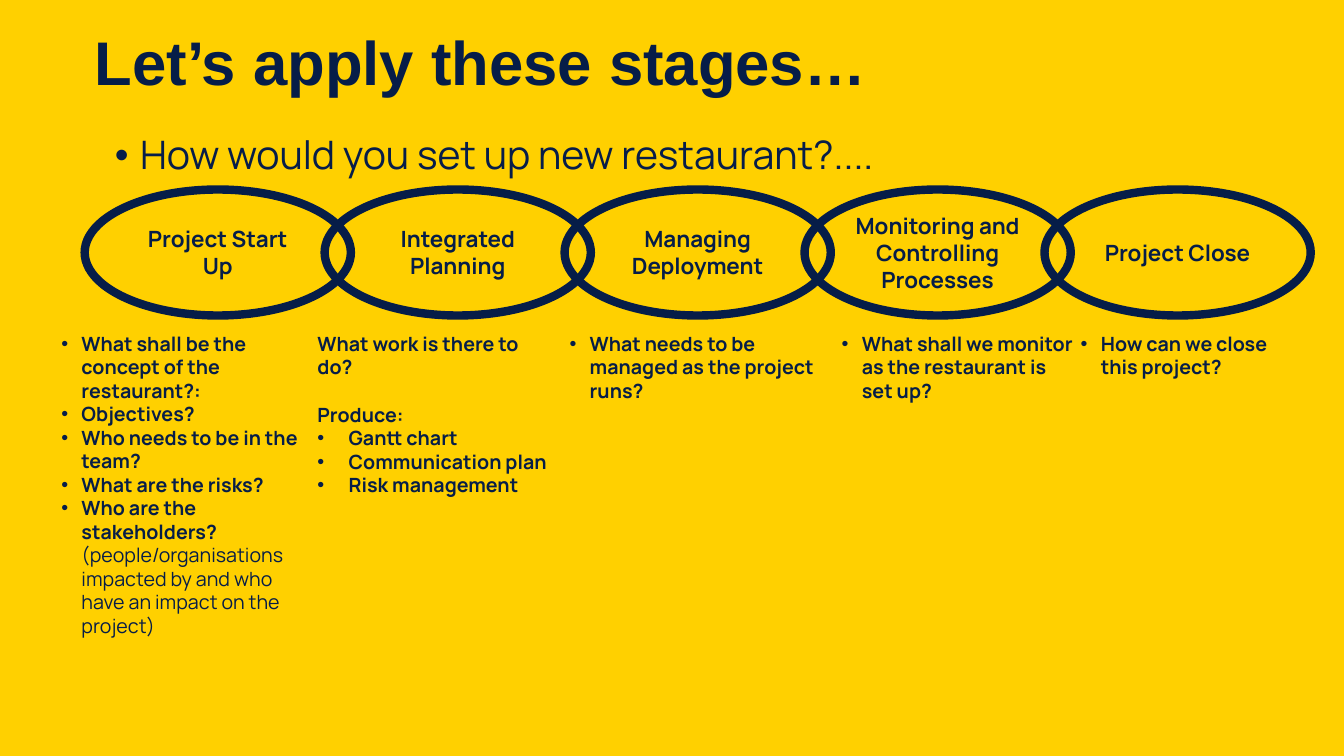
"""Build the slide that applies the project stages to a new restaurant."""
import dataclasses

import pptx
import pptx.dml.color
import pptx.enum.shapes
import pptx.enum.text
import pptx.oxml
import pptx.oxml.ns
import pptx.util
from pptx.util import Inches


@dataclasses.dataclass(frozen=True)
class Theme:
    """Colours, fonts and type sizes of the slide."""

    background: str = "FFD000"
    navy: str = "061D48"
    body_navy: str = "071D49"
    heading_font: str = "Arial"
    text_font: str = "Manrope"
    title_size: int = 44
    prompt_size: int = 28
    stage_size: int = 16
    question_size: int = 14
    gap: int = 17
    ring_width: int = 6


@dataclasses.dataclass(frozen=True)
class Line:
    """One paragraph of a question column."""

    text: str
    indent: float = 0.2
    aside: str = ""
    gap: bool = False


STAGES = [
    "Project Start Up",
    "Integrated Planning",
    "Managing Deployment",
    "Monitoring and Controlling Processes",
    "Project Close",
]
RING_LEFT, RING_STEP = 0.84, 2.38

QUESTIONS = [
    (0.51, 2.66, 3.16, [
        Line("What shall be the concept of the restaurant?:"),
        Line("Objectives?"),
        Line("Who needs to be in the team?"),
        Line("What are the risks?"),
        Line("Who are the stakeholders? ",
             aside="(people/organisations impacted by and who have an impact on the project)"),
    ]),
    (3.05, 2.54, 1.75, [
        Line("What work is there to do?", indent=0),
        Line("Produce:", indent=0, gap=True),
        Line("Gantt chart", indent=0.31),
        Line("Communication plan", indent=0.31),
        Line("Risk management", indent=0.31),
    ]),
    (5.55, 2.92, 0.81, [Line("What needs to be managed as the project runs?")]),
    (8.25, 2.54, 0.81, [Line("What shall we monitor as the restaurant is set up?")]),
    (10.62, 2.38, 0.57, [Line("How can we close this project?")]),
]


class SlideBuilder:
    """Draws themed elements on one slide."""

    def __init__(self, slide, theme):
        """Keep the slide and theme and paint the background."""
        self.slide = slide
        self.theme = theme
        fill = slide.background.fill
        fill.solid()
        fill.fore_color.rgb = self.colour(theme.background)

    def colour(self, value):
        """Return an RGB colour from its hexadecimal value."""
        return pptx.dml.color.RGBColor.from_string(value)

    def format_run(self, run, size, bold=True, font=None, colour=None):
        """Apply the type style to a run."""
        run.font.size = pptx.util.Pt(size)
        run.font.bold = bold
        run.font.name = font or self.theme.text_font
        run.font.color.rgb = self.colour(colour or self.theme.navy)

    def bullet(self, paragraph, indent):
        """Give a paragraph a round bullet with a hanging indent."""
        properties = paragraph._p.get_or_add_pPr()
        properties.set("marL", str(Inches(indent)))
        properties.set("indent", str(-Inches(indent)))
        namespace = pptx.oxml.ns.nsdecls("a")
        for markup in (f'<a:buFont {namespace} typeface="Arial"/>',
                       f'<a:buChar {namespace} char="•"/>'):
            properties.append(pptx.oxml.parse_xml(markup))

    def place(self, placeholder, left, top, width, height, text, anchor):
        """Move a placeholder, fill it and return its paragraph."""
        placeholder.left, placeholder.top = Inches(left), Inches(top)
        placeholder.width, placeholder.height = Inches(width), Inches(height)
        frame = placeholder.text_frame
        frame.text = text
        frame.word_wrap = True
        frame.auto_size = pptx.enum.text.MSO_AUTO_SIZE.NONE
        frame.vertical_anchor = anchor
        paragraph = frame.paragraphs[0]
        paragraph.alignment = pptx.enum.text.PP_ALIGN.LEFT
        paragraph.line_spacing = 0.9
        paragraph.space_before = pptx.util.Pt(0)
        return paragraph

    def title(self, text):
        """Write the slide title."""
        heading = self.place(self.slide.shapes.title, 0.84, -0.07, 8, 1.45, text,
                             pptx.enum.text.MSO_ANCHOR.MIDDLE)
        self.format_run(heading.runs[0], self.theme.title_size, font=self.theme.heading_font)

    def prompt(self, text):
        """Write the leading question in the body placeholder."""
        question = self.place(self.slide.placeholders[1], 1.04, 1.3, 11.5, 0.77, text,
                              pptx.enum.text.MSO_ANCHOR.TOP)
        self.bullet(question, 0.25)
        self.format_run(question.runs[0], self.theme.prompt_size, bold=False,
                        colour=self.theme.body_navy)

    def stage(self, left, text):
        """Draw one ring of the chain with its stage name."""
        ring = self.slide.shapes.add_shape(
            pptx.enum.shapes.MSO_SHAPE.OVAL,
            Inches(left), Inches(1.88), Inches(2.64), Inches(1.25))
        ring.shadow.inherit = False
        ring.fill.background()
        ring.line.color.rgb = self.colour(self.theme.navy)
        ring.line.width = pptx.util.Pt(self.theme.ring_width)
        frame = ring.text_frame
        frame.text = text
        frame.word_wrap = True
        frame.vertical_anchor = pptx.enum.text.MSO_ANCHOR.MIDDLE
        frame.paragraphs[0].alignment = pptx.enum.text.PP_ALIGN.CENTER
        self.format_run(frame.paragraphs[0].runs[0], self.theme.stage_size)

    def questions(self, left, width, height, lines):
        """Write the column of questions under a stage."""
        column = self.slide.shapes.add_textbox(
            Inches(left), Inches(3.24), Inches(width), Inches(height))
        frame = column.text_frame
        frame.word_wrap = True
        frame.auto_size = pptx.enum.text.MSO_AUTO_SIZE.SHAPE_TO_FIT_TEXT
        for number, line in enumerate(lines):
            paragraph = frame.add_paragraph() if number else frame.paragraphs[0]
            paragraph.text = line.text
            if line.indent:
                self.bullet(paragraph, line.indent)
            if line.gap:
                paragraph.space_before = pptx.util.Pt(self.theme.gap)
            self.format_run(paragraph.runs[0], self.theme.question_size)
            if line.aside:
                aside = paragraph.add_run()
                aside.text = line.aside
                self.format_run(aside, self.theme.question_size, bold=False)


def main():
    """Build and save the presentation."""
    deck = pptx.Presentation()
    deck.slide_width, deck.slide_height = Inches(13.33), Inches(7.5)
    builder = SlideBuilder(deck.slides.add_slide(deck.slide_layouts[1]), Theme())
    builder.title("Let’s apply these stages…")
    builder.prompt("How would you set up new restaurant?....")
    for position, name in enumerate(STAGES):
        builder.stage(RING_LEFT + position * RING_STEP, name)
    for left, width, height, lines in QUESTIONS:
        builder.questions(left, width, height, lines)
    deck.save("out.pptx")


if __name__ == "__main__":
    main()
